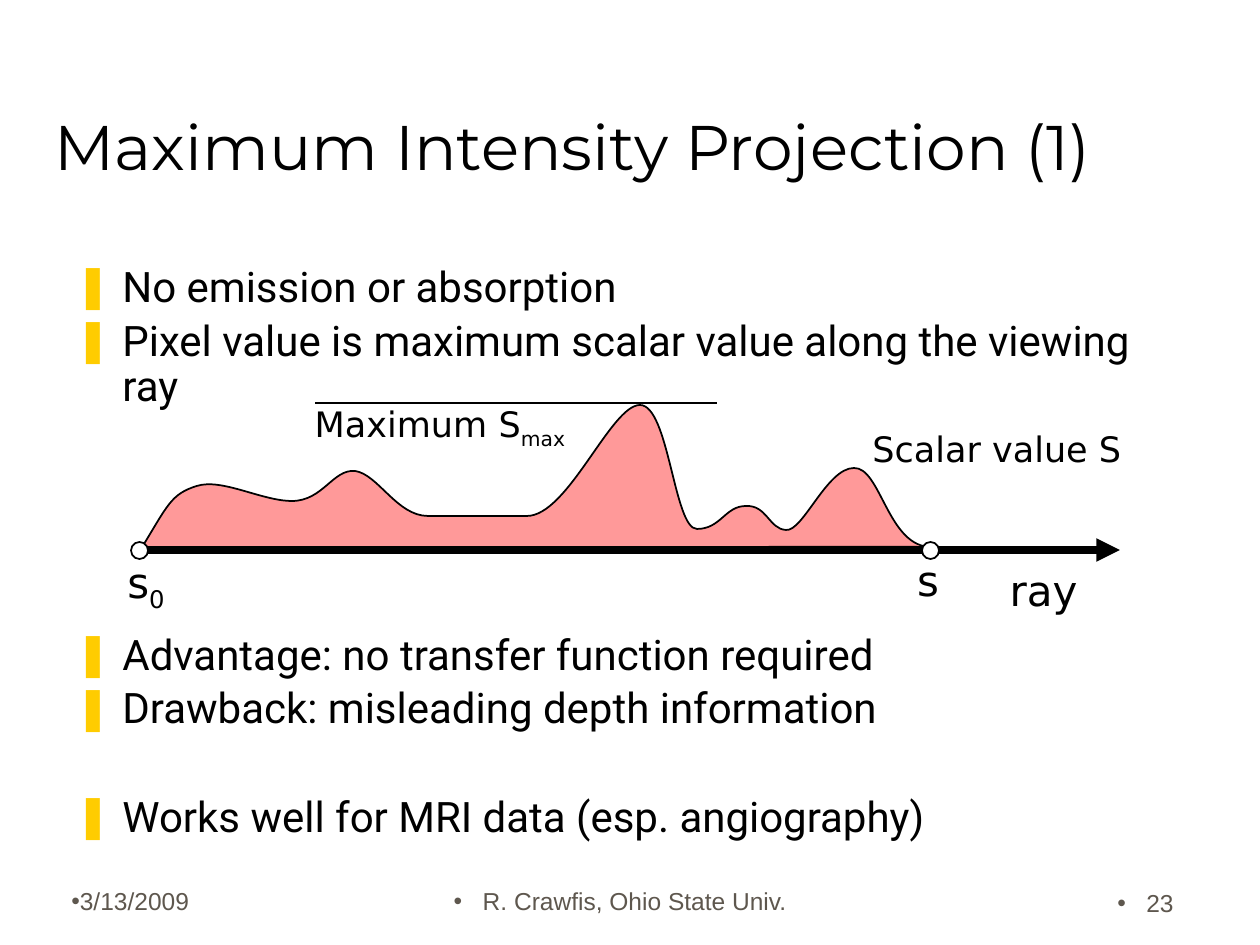
from dataclasses import dataclass

from lxml import etree
from pptx import Presentation
from pptx import util as u
from pptx.dml.color import RGBColor
from pptx.enum import shapes, text
from pptx.oxml import ns

EMU_PER_PX = 914400 / 126
BLACK = RGBColor(0x00, 0x00, 0x00)
WHITE = RGBColor(0xFF, 0xFF, 0xFF)
GREY = RGBColor(0x5E, 0x57, 0x4E)
PINK = RGBColor(0xFF, 0x99, 0x99)
YELLOW = RGBColor(0xFF, 0xCC, 0x00)
LEFT, CENTER, RIGHT = text.PP_ALIGN.LEFT, text.PP_ALIGN.CENTER, text.PP_ALIGN.RIGHT


@dataclass(frozen=True)
class Box:
    left: int
    top: int
    width: int
    height: int


@dataclass(frozen=True)
class Label:
    box: Box
    wording: str
    size: int
    subscript: str = ""


@dataclass(frozen=True)
class Footer:
    box: Box
    wording: str
    alignment: text.PP_ALIGN
    hanging: int


@dataclass(frozen=True)
class Point:
    wording: str
    space_before: float


FOOTERS = [
    Footer(Box(59, 859, 262, 63), "3/13/2009", LEFT, 8),
    Footer(Box(431, 859, 399, 63), "R. Crawfis, Ohio State Univ.", CENTER, 29),
    Footer(Box(924, 861, 262, 63), "23", RIGHT, 29),
]
POINTS = [
    Point("No emission or absorption", 0),
    Point("Pixel value is maximum scalar value along the viewing ray", 4.8),
    Point("Advantage: no transfer function required", 127.5),
    Point("Drawback: misleading depth information", 4.8),
    Point("Works well for MRI data (esp. angiography)", 36),
]
LABELS = [
    Label(Box(997, 558, 93, 63), "ray", 24),
    Label(Box(113, 550, 66, 63), "s", 24, "0"),
    Label(Box(904, 548, 48, 63), "s", 24),
    Label(Box(859, 421, 276, 54), "Scalar value S", 20),
    Label(Box(299, 396, 282, 54), "Maximum S", 20, "max"),
]
SAMPLE_MARKERS = [Box(922, 542, 17, 17), Box(131, 542, 17, 17)]
PROFILE_START = (141, 549)
PROFILE_CURVES = [
    ((168, 505), (171, 494), (197, 486)),
    ((222, 478), (262, 501), (292, 501)),
    ((323, 501), (333, 469), (355, 471)),
    ((378, 474), (397, 516), (428, 516)),
    ((460, 516), (485, 516), (527, 516)),
    ((568, 516), (611, 405), (640, 405)),
    ((669, 405), (674, 529), (697, 529)),
    ((721, 529), (725, 506), (746, 506)),
    ((767, 505), (769, 529), (786, 530)),
    ((803, 532), (827, 468), (854, 468)),
    ((881, 467), (888, 548), (932, 547)),
    ((808, 546), (265, 549), (141, 549)),
]


def px(value: float) -> u.Emu:
    return u.Emu(round(value * EMU_PER_PX))


def place(box: Box) -> tuple:
    return px(box.left), px(box.top), px(box.width), px(box.height)


def set_font(paragraph, name: str, size: int, color: RGBColor) -> None:
    paragraph.font.name = name
    paragraph.font.size = u.Pt(size)
    paragraph.font.color.rgb = color


def add_bullet(paragraph, character: str, margin: int, hanging: int, color: RGBColor) -> None:
    properties = paragraph._p.get_or_add_pPr()
    properties.set("marL", str(px(margin)))
    properties.set("indent", str(-px(hanging)))
    bullet_color = etree.SubElement(properties, ns.qn("a:buClr"))
    etree.SubElement(bullet_color, ns.qn("a:srgbClr")).set("val", str(color))
    etree.SubElement(properties, ns.qn("a:buFont")).set("typeface", "Arial")
    etree.SubElement(properties, ns.qn("a:buChar")).set("char", character)


def add_title(slide, box: Box, wording: str) -> None:
    title = slide.shapes.title
    title.left, title.top, title.width, title.height = place(box)
    frame = title.text_frame
    frame.text = wording
    frame.auto_size = text.MSO_AUTO_SIZE.NONE
    frame.vertical_anchor = text.MSO_ANCHOR.BOTTOM
    paragraph = frame.paragraphs[0]
    paragraph.alignment = LEFT
    set_font(paragraph, "Montserrat", 36, BLACK)


def add_points(slide, box: Box, points: list[Point]) -> None:
    frame = slide.shapes.add_textbox(*place(box)).text_frame
    frame.word_wrap = True
    for index, point in enumerate(points):
        paragraph = frame.add_paragraph() if index else frame.paragraphs[0]
        paragraph.text = point.wording
        paragraph.line_spacing = 0.9
        paragraph.space_before = u.Pt(point.space_before)
        add_bullet(paragraph, "❚", 47, 47, YELLOW)
        set_font(paragraph, "Roboto", 24, BLACK)


def add_footer(slide, footer: Footer) -> None:
    frame = slide.shapes.add_textbox(*place(footer.box)).text_frame
    frame.word_wrap = True
    frame.vertical_anchor = text.MSO_ANCHOR.BOTTOM
    paragraph = frame.paragraphs[0]
    paragraph.text = footer.wording
    paragraph.alignment = footer.alignment
    add_bullet(paragraph, "•", 8, footer.hanging, GREY)
    set_font(paragraph, "Arial", 14, GREY)


def add_label(slide, label: Label) -> None:
    frame = slide.shapes.add_textbox(*place(label.box)).text_frame
    frame.word_wrap = False
    frame.auto_size = text.MSO_AUTO_SIZE.SHAPE_TO_FIT_TEXT
    paragraph = frame.paragraphs[0]
    paragraph.text = label.wording
    paragraph.alignment = CENTER
    set_font(paragraph, "DejaVu Sans", label.size, BLACK)
    if label.subscript:
        run = paragraph.add_run()
        run.text = label.subscript
        run._r.get_or_add_rPr().set("baseline", "-25000")


def style_shape(shape, fill: RGBColor) -> None:
    shape.shadow.inherit = False
    shape.fill.solid()
    shape.fill.fore_color.rgb = fill
    shape.line.color.rgb = BLACK
    shape.line.width = u.Pt(1)


def add_profile(slide) -> None:
    builder = slide.shapes.build_freeform(*map(px, PROFILE_START))
    builder.add_line_segments([tuple(map(px, curve[-1])) for curve in PROFILE_CURVES], close=True)
    profile = builder.convert_to_shape()
    segments = list(profile._element.iter(ns.qn("a:lnTo")))
    for segment, curve in zip(segments, PROFILE_CURVES):
        bezier = etree.Element(ns.qn("a:cubicBezTo"))
        for x, y in curve:
            point = etree.SubElement(bezier, ns.qn("a:pt"))
            point.set("x", str(px(x) - profile.left))
            point.set("y", str(px(y) - profile.top))
        segment.getparent().replace(segment, bezier)
    style_shape(profile, PINK)


def add_line(slide, begin: tuple[int, int], end: tuple[int, int], width: float, arrow: bool = False) -> None:
    line = slide.shapes.add_connector(shapes.MSO_CONNECTOR.STRAIGHT, *map(px, begin + end))
    line.line.color.rgb = BLACK
    line.line.width = u.Pt(width)
    if arrow:
        etree.SubElement(line.line._get_or_add_ln(), ns.qn("a:tailEnd")).set("type", "triangle")
    etree.SubElement(line._element.spPr, ns.qn("a:effectLst"))


def main() -> None:
    presentation = Presentation()
    presentation.slide_width, presentation.slide_height = px(1260), px(945)
    slide = presentation.slides.add_slide(presentation.slide_layouts[5])
    for footer in FOOTERS:
        add_footer(slide, footer)
    add_title(slide, Box(42, 32, 1176, 157), "Maximum Intensity Projection (1)")
    add_points(slide, Box(63, 260, 1126, 575), POINTS)
    add_profile(slide)
    add_line(slide, (139, 550), (1120, 550), 4.5, arrow=True)
    add_line(slide, (717, 403), (315, 403), 1)
    for marker in SAMPLE_MARKERS:
        style_shape(slide.shapes.add_shape(shapes.MSO_SHAPE.OVAL, *place(marker)), WHITE)
    for label in LABELS:
        add_label(slide, label)
    presentation.save("out.pptx")


if __name__ == "__main__":
    main()
